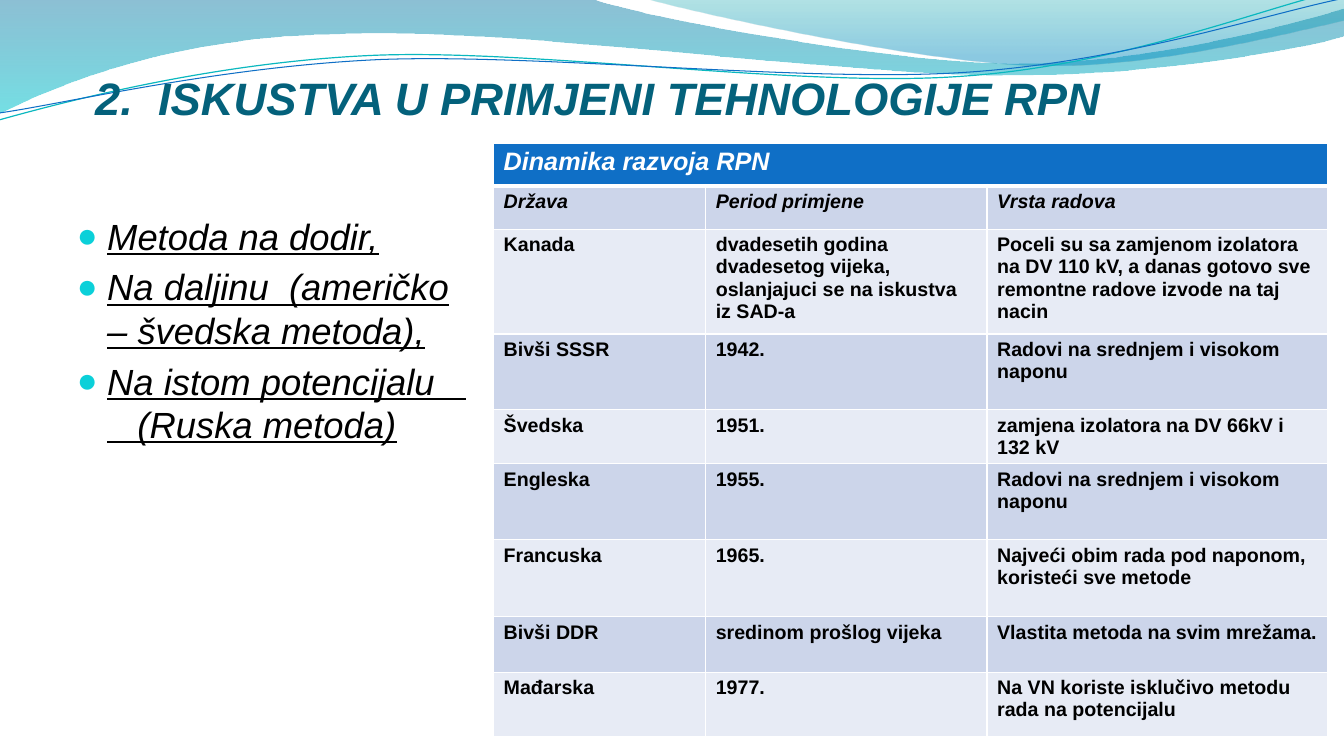
from dataclasses import dataclass

from lxml.etree import SubElement
from pptx import Presentation
from pptx.dml.color import RGBColor as Rgb
from pptx.enum.text import MSO_ANCHOR as Anchor
from pptx.oxml.ns import qn
from pptx.util import Pt


@dataclass(frozen=True)
class Theme:
    font: str = "Arial"
    title: str = "04617B"
    text: str = "000000"
    bullet: str = "0BD0D9"
    header: str = "0F6FC6"
    white: str = "FFFFFF"
    bands: tuple = ("CCD5EA", "E7EBF5")
    strands: tuple = (("0AB8BF", 0.85), ("0F6FC6", 0.75))
    broad_wave: tuple = (("0074A1", 0, 45), ("00C6CF", 1, 55))
    right_wave: tuple = (("00A1A9", 0, 30), ("008BBF", 0.8, 45))
    title_size: float = 32.4
    body_size: float = 26
    header_size: float = 18
    cell_size: float = 14


@dataclass(frozen=True)
class Box:
    left: float
    top: float
    width: float
    height: float

    def lengths(self):
        return Pt(self.left), Pt(self.top), Pt(self.width), Pt(self.height)


THEME = Theme()

BROAD_WAVE = (
    [(0, 0)],
    [(422.6, -0.7)],
    [(456.5, 12.2), (637.2, 45.4), (727.9, 45.4)],
    [(818.6, 45.4), (920.2, 18.7), (959.8, 6.5)],
    [(961.2, 25.9)],
    [(943.9, 31.7), (835.2, 54.7), (715.7, 54)],
    [(596.9, 54), (366.5, 20.2), (247, 24.5)],
    [(123.8, 25.9), (43.9, 59.8), (-0.7, 81.4)],
)
RIGHT_WAVE = (
    [(460.1, -0.7)],
    [(488.9, 7.9), (654.5, 44.6), (738, 46.8)],
    [(821.5, 49.7), (923, 23), (959.8, 15.1)],
    [(959.8, 0)],
)
STRANDS = (
    ([(-0.7, 85.7)], [(46.1, 72.7), (151.9, 44.6), (265.7, 39.6)],
     [(379.4, 34.6), (568.8, 62.6), (684, 54.7)],
     [(799.2, 47.5), (901.4, 5.8), (958.3, -7.2)]),
    ([(0, 80.6)], [(45.4, 74.2), (157, 47.5), (272.2, 42.5)],
     [(386.6, 38.2), (573.1, 59), (687.6, 51.8)],
     [(802.8, 44.6), (903.6, 10.1), (960.5, -1.4)]),
)
METHODS = (
    "Metoda na dodir,",
    "Na daljinu  (američko – švedska metoda),",
    "Na istom potencijalu       (Ruska metoda)",
)
COLUMN_WIDTHS = (151.5, 201, 243.5)
ROWS = (
    (30.5, "Dinamika razvoja RPN", "", ""),
    (31, "Država", "Period primjene", "Vrsta radova"),
    (75, "Kanada",
     "dvadesetih godina dvadesetog vijeka, oslanjajuci se na iskustva iz SAD-a",
     "Poceli su sa zamjenom izolatora na DV 110 kV, a danas gotovo sve "
     "remontne radove izvode na taj nacin"),
    (54, "Bivši SSSR", "1942.", "Radovi na srednjem i visokom naponu"),
    (38.5, "Švedska", "1951.", "zamjena izolatora na DV 66kV i 132 kV"),
    (54, "Engleska", "1955.", "Radovi na srednjem i visokom naponu"),
    (55.5, "Francuska", "1965.",
     "Najveći obim rada pod naponom, koristeći sve metode"),
    (39.5, "Bivši DDR", "sredinom prošlog vijeka",
     "Vlastita metoda na svim mrežama."),
    (46, "Mađarska", "1977.",
     "Na VN koriste isklučivo metodu rada na potencijalu"),
)


def add_outline(page, box, outline, close):
    points = [(Pt(box.left + x), Pt(box.top + y)) for part in outline for x, y in part]
    builder = page.shapes.build_freeform(*points[0])
    builder.add_line_segments(points[1:], close=close)
    shape = builder.convert_to_shape()
    shape.shadow.inherit = False
    lines = shape.element.spPr.iter(qn("a:lnTo"))
    lines = iter(list(lines))
    for part in outline[1:]:
        first, *others = [next(lines) for _ in part]
        if others:
            first.tag = qn("a:cubicBezTo")
        for line in others:
            first.append(line[0])
            line.getparent().remove(line)
    return shape


def add_waves(page, box):
    for outline, stops in ((BROAD_WAVE, THEME.broad_wave), (RIGHT_WAVE, THEME.right_wave)):
        wave = add_outline(page, box, outline, True)
        wave.line.fill.background()
        wave.fill.gradient()
        wave.fill.gradient_angle = 270
        for stop, (color, position, _) in zip(wave.fill.gradient_stops, stops):
            stop.color.rgb = Rgb.from_string(color)
            stop.position = position
        tints = wave.element.spPr.iter(qn("a:srgbClr"))
        for tint, (_, _, opacity) in zip(tints, stops):
            SubElement(tint, qn("a:alpha"), val=str(opacity * 1000))
    for outline, (color, width) in zip(STRANDS, THEME.strands):
        strand = add_outline(page, box, outline, False)
        strand.fill.background()
        strand.line.color.rgb = Rgb.from_string(color)
        strand.line.width = Pt(width)


def set_font(para, size, color, bold=False, italic=False, underline=False):
    font = para.font
    font.name, font.size = THEME.font, Pt(size)
    font.color.rgb = Rgb.from_string(color)
    font.bold, font.italic, font.underline = bold, italic, underline


def add_frame(page, box, left, top):
    frame = page.shapes.add_textbox(*box.lengths()).text_frame
    frame.word_wrap = True
    frame.margin_left, frame.margin_top = Pt(left), Pt(top)
    frame.margin_right = frame.margin_bottom = 0
    return frame


def add_title(page, box):
    para = add_frame(page, box, 20, 0).paragraphs[0]
    para.text = "2.  ISKUSTVA U PRIMJENI TEHNOLOGIJE RPN"
    set_font(para, THEME.title_size, THEME.title, bold=True, italic=True)


def add_methods(page, box):
    frame = add_frame(page, box, 7, 50.8)
    frame.margin_right = Pt(7.2)
    for index, method in enumerate(METHODS):
        para = frame.add_paragraph() if index else frame.paragraphs[0]
        para.text = method
        para.line_spacing, para.space_after = Pt(31), Pt(5.2)
        set_font(para, THEME.body_size, THEME.text, italic=True, underline=True)
        props = para._p.get_or_add_pPr()
        props.set("marL", str(Pt(21.6)))
        props.set("indent", str(-Pt(21.6)))
        color = SubElement(props, qn("a:buClr"))
        SubElement(color, qn("a:srgbClr"), val=THEME.bullet)
        SubElement(props, qn("a:buSzPct"), val="95000")
        SubElement(props, qn("a:buFont"), typeface=THEME.font)
        SubElement(props, qn("a:buChar"), char="●")
        props.append(props.find(qn("a:defRPr")))


def add_borders(cell, top, bottom):
    props = cell._tc.get_or_add_tcPr()
    for index, (side, width) in enumerate(zip("LRTB", (1, 1, top, bottom))):
        line = SubElement(props, qn(f"a:ln{side}"), w=str(Pt(width)))
        fill = SubElement(line, qn("a:solidFill"))
        SubElement(fill, qn("a:srgbClr"), val=THEME.white)
        props.insert(index, line)


def add_history(page, box):
    table = page.shapes.add_table(len(ROWS), len(COLUMN_WIDTHS), *box.lengths()).table
    for column, width in zip(table.columns, COLUMN_WIDTHS):
        column.width = Pt(width)
    table.cell(0, 0).merge(table.cell(0, len(COLUMN_WIDTHS) - 1))
    for row, (height, *texts) in enumerate(ROWS):
        table.rows[row].height = Pt(height)
        header = row == 0
        color = THEME.header if header else THEME.bands[(row - 1) % 2]
        for cell, text in zip(table.rows[row].cells, texts):
            cell.fill.solid()
            cell.fill.fore_color.rgb = Rgb.from_string(color)
            cell.vertical_anchor = Anchor.TOP
            cell.margin_bottom = 0
            add_borders(cell, 3 if row == 1 else 1, 3 if header else 1)
            para = cell.text_frame.paragraphs[0]
            para.text = text
            set_font(para, THEME.header_size if header else THEME.cell_size,
                     THEME.white if header else THEME.text, bold=True, italic=row < 2)


def main():
    deck = Presentation()
    deck.slide_width, deck.slide_height = Pt(960), Pt(540)
    page = deck.slides.add_slide(deck.slide_layouts[6])
    add_waves(page, Box(0, 0, 960, 86))
    add_title(page, Box(48, 50.2, 864, 65.5))
    add_methods(page, Box(48, 102.2, 296, 432.8))
    add_history(page, Box(352.6, 102.2, 596, 424))
    deck.save("out.pptx")


if __name__ == "__main__":
    main()
